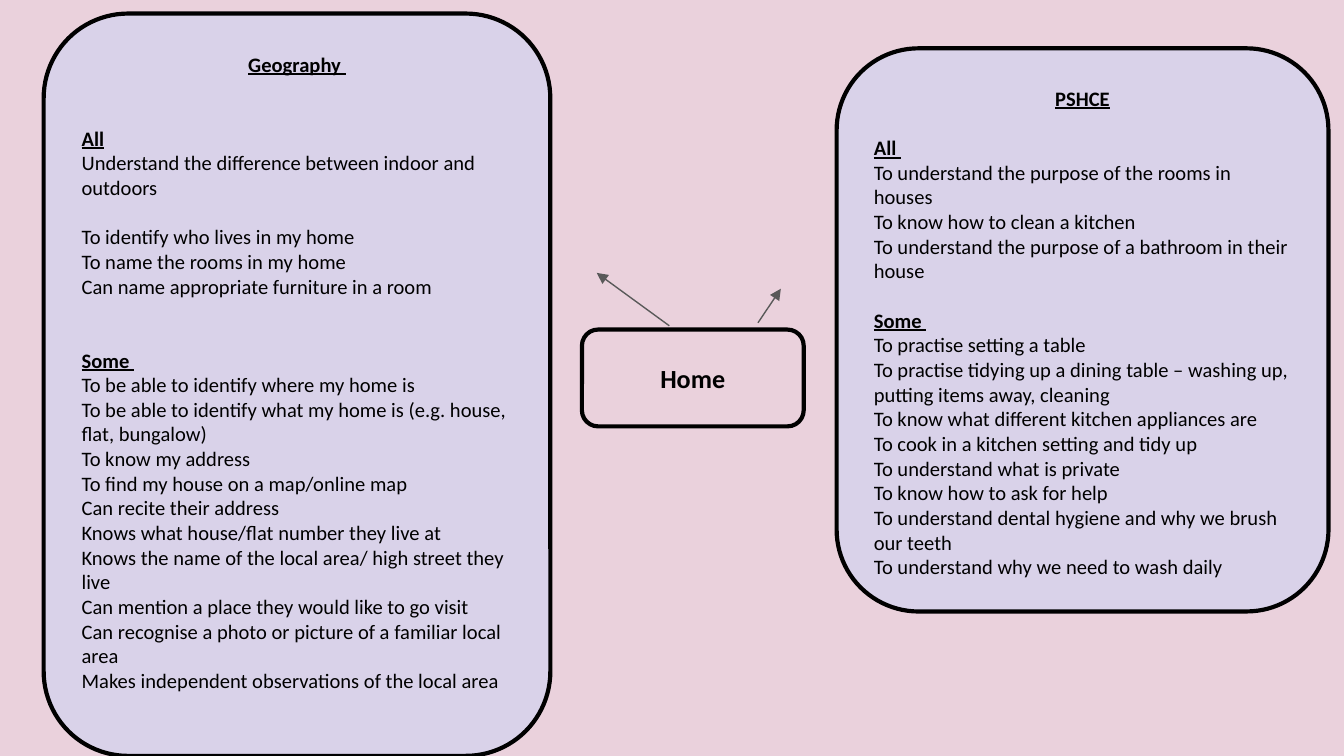
"""Build a topic slide linking Home to its Geography and PSHCE objectives."""
import pptx
import pptx.dml.color
import pptx.enum.shapes
import pptx.enum.text
import pptx.oxml
import pptx.oxml.ns
import pptx.util

presentation = pptx.Presentation()
presentation.slide_width = pptx.util.Inches(10)
presentation.slide_height = presentation.slide_width * 9 // 16
column = presentation.slide_width / 100
row = presentation.slide_height / 100
slide = presentation.slides.add_slide(presentation.slide_layouts[6])

PINK, LILAC, BLACK, GREY = "EAD1DC", "D9D2E9", "000000", "595959"
LINE_HEIGHT = 13.2
TITLES = ("Geography ", "PSHCE")
HEADINGS = TITLES + ("All", "All ", "Some ")


def paint(color_format, color):
    color_format.rgb = pptx.dml.color.RGBColor.from_string(color)


def add_card(left, top, width, height, fill, anchor):
    shape = slide.shapes.add_shape(
        pptx.enum.shapes.MSO_SHAPE.ROUNDED_RECTANGLE,
        round(left * column), round(top * row),
        round(width * column), round(height * row))
    shape.shadow.inherit = False
    shape.fill.solid()
    paint(shape.fill.fore_color, fill)
    paint(shape.line.color, BLACK)
    shape.line.width = pptx.util.Pt(2.25)
    text_frame = shape.text_frame
    text_frame.word_wrap = True
    text_frame.vertical_anchor = anchor
    text_frame.margin_left = text_frame.margin_right = pptx.util.Inches(0.1)
    text_frame.margin_top = text_frame.margin_bottom = pptx.util.Inches(0.1)
    return text_frame


background_fill = slide.background.fill
background_fill.solid()
paint(background_fill.fore_color, PINK)

home = add_card(43.3, 43.6, 16.5, 12.8, PINK, pptx.enum.text.MSO_ANCHOR.MIDDLE)
home.text = "Home"
home.paragraphs[0].alignment = pptx.enum.text.PP_ALIGN.CENTER
home_font = home.paragraphs[0].runs[0].font
home_font.name, home_font.size, home_font.bold = "Calibri", pptx.util.Pt(14), True
paint(home_font.color, BLACK)

subjects = [
    ((62.25, 6.4, 36.6, 74.5), [
        (0, ["PSHCE"]),
        (1, ["All ",
             "To understand the purpose of the rooms in houses",
             "To know how to clean a kitchen",
             "To understand the purpose of a bathroom in their house"]),
        (1, ["Some ",
             "To practise setting a table",
             "To practise tidying up a dining table – washing up, putting items away, cleaning",
             "To know what different kitchen appliances are",
             "To cook in a kitchen setting and tidy up",
             "To understand what is private",
             "To know how to ask for help",
             "To understand dental hygiene and why we brush our teeth",
             "To understand why we need to wash daily"]),
    ]),
    ((3.25, 1.8, 37.7, 98.2), [
        (0, ["Geography "]),
        (2, ["All",
             "Understand the difference between indoor and outdoors"]),
        (1, ["To identify who lives in my home",
             "To name the rooms in my home",
             "Can name appropriate furniture in a room"]),
        (2, ["Some ",
             "To be able to identify where my home is",
             "To be able to identify what my home is (e.g. house, flat, bungalow)",
             "To know my address",
             "To find my house on a map/online map",
             "Can recite their address",
             "Knows what house/flat number they live at",
             "Knows the name of the local area/ high street they live",
             "Can mention a place they would like to go visit",
             "Can recognise a photo or picture of a familiar local area",
             "Makes independent observations of the local area"]),
    ]),
]

for frame, sections in subjects:
    text_frame = add_card(*frame, LILAC, pptx.enum.text.MSO_ANCHOR.TOP)
    text_frame.text = "\n".join(line for gap, lines in sections for line in lines)
    gaps = [gap if index == 0 else 0
            for gap, lines in sections for index in range(len(lines))]
    for paragraph, gap in zip(text_frame.paragraphs, gaps):
        is_title = paragraph.text in TITLES
        paragraph.alignment = (pptx.enum.text.PP_ALIGN.CENTER if is_title
                               else pptx.enum.text.PP_ALIGN.LEFT)
        if gap:
            paragraph.space_before = pptx.util.Pt(gap * LINE_HEIGHT)
        font = paragraph.runs[0].font
        font.name, font.size = "Calibri", pptx.util.Pt(11)
        font.bold = font.underline = paragraph.text in HEADINGS
        paint(font.color, BLACK)

arrows = [(56.4, 42.7, 58.1, 38.2), (49.8, 43.1, 44.4, 36.1)]
for start_x, start_y, end_x, end_y in arrows:
    arrow = slide.shapes.add_connector(
        pptx.enum.shapes.MSO_CONNECTOR.STRAIGHT,
        round(start_x * column), round(start_y * row),
        round(end_x * column), round(end_y * row))
    paint(arrow.line.color, GREY)
    arrow.line.width = pptx.util.Pt(0.75)
    namespace = pptx.oxml.ns.nsdecls("a")
    properties = arrow._element.spPr
    properties.get_or_add_ln().append(
        pptx.oxml.parse_xml(f'<a:tailEnd {namespace} type="triangle"/>'))
    properties.append(pptx.oxml.parse_xml(f"<a:effectLst {namespace}/>"))

presentation.save("out.pptx")
